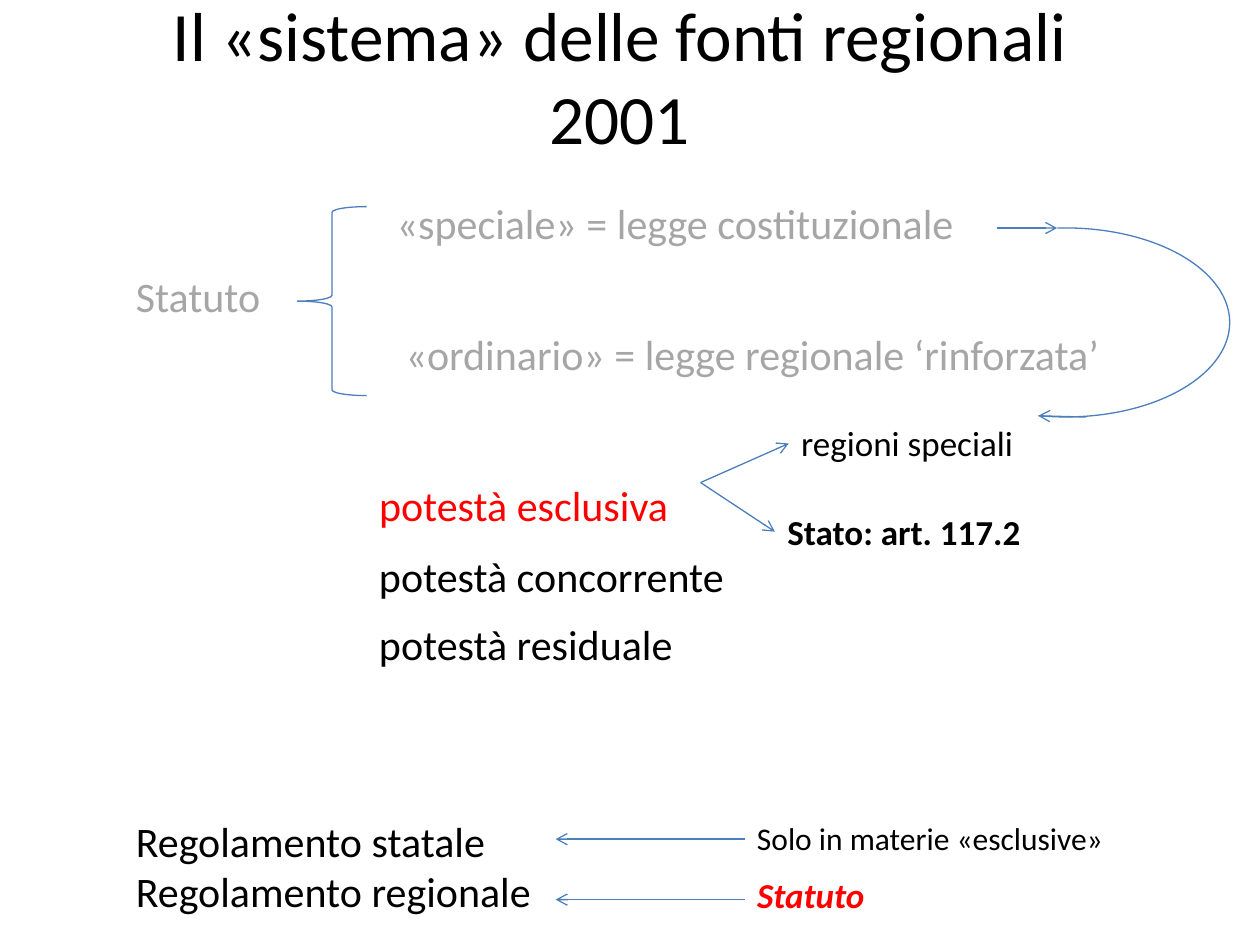
from pptx import Presentation
from pptx.dml.color import RGBColor
from pptx.enum.shapes import MSO_CONNECTOR, MSO_SHAPE
from pptx.enum.text import MSO_ANCHOR, MSO_AUTO_SIZE, PP_ALIGN
from pptx.oxml.ns import qn
from pptx.util import Inches, Pt
from lxml.etree import SubElement

COLORS = {"black": "000000", "grey": "A6A6A6", "red": "FF0000", "line": "4B7EBC"}


class SlideBuilder:
    font = "Calibri"
    line_width = 0.75

    def __init__(self, slide):
        self.slide = slide

    def add_run(self, p, text, size, color="black", bold=False, italic=False):
        r = p.add_run()
        r.text = text
        r.font.name = self.font
        r.font.size = Pt(size)
        r.font.bold = bold
        r.font.italic = italic
        r.font.color.rgb = RGBColor.from_string(COLORS[color])

    def style_line(self, sp):
        sp.line.color.rgb = RGBColor.from_string(COLORS["line"])
        sp.line.width = Pt(self.line_width)

    def title(self, text, x, y, w, h, size):
        sp = self.slide.shapes.title
        sp.left, sp.top, sp.width, sp.height = map(Inches, (x, y, w, h))
        tf = sp.text_frame
        tf.word_wrap = True
        tf.auto_size = MSO_AUTO_SIZE.NONE
        tf.vertical_anchor = MSO_ANCHOR.MIDDLE
        p = tf.paragraphs[0]
        p.alignment = PP_ALIGN.CENTER
        self.add_run(p, text, size)

    def text(self, lines, x, y, w, h, size=24, **style):
        sp = self.slide.shapes.add_textbox(*map(Inches, (x, y, w, h)))
        tf = sp.text_frame
        tf.word_wrap = True
        tf.auto_size = MSO_AUTO_SIZE.SHAPE_TO_FIT_TEXT
        for i, line in enumerate(lines):
            p = tf.add_paragraph() if i else tf.paragraphs[0]
            self.add_run(p, line, size, **style)

    def outline(self, kind, x, y, w, h, adjustments=()):
        sp = self.slide.shapes.add_shape(kind, *map(Inches, (x, y, w, h)))
        sp.shadow.inherit = False
        sp.fill.background()
        self.style_line(sp)
        for i, value in enumerate(adjustments):
            sp.adjustments[i] = value

    def arrow(self, x1, y1, x2, y2):
        sp = self.slide.shapes.add_connector(
            MSO_CONNECTOR.STRAIGHT, *map(Inches, (x1, y1, x2, y2)))
        self.style_line(sp)
        SubElement(sp.line._get_or_add_ln(), qn("a:tailEnd"), type="arrow")
        SubElement(sp._element.spPr, qn("a:effectLst"))


def main():
    prs = Presentation()
    prs.slide_width, prs.slide_height = Inches(10), Inches(7.5)
    s = SlideBuilder(prs.slides.add_slide(prs.slide_layouts[5]))

    s.title("Il «sistema» delle fonti regionali 2001", 0.67, 0.13, 8.5, 0.94, 39.6)

    s.text(["Statuto"], 0.98, 2.1, 1.34, 0.5, color="grey")
    s.outline(MSO_SHAPE.LEFT_BRACE, 2.36, 1.64, 0.55, 1.5)
    s.text(["«speciale» = legge costituzionale"], 3.05, 1.52, 5.35, 0.5, color="grey")
    s.text(["«ordinario» = legge regionale ‘rinforzata’"],
           3.12, 2.56, 6.05, 0.5, color="grey")

    s.outline(MSO_SHAPE.ARC, 7.16, 1.81, 2.6, 1.5, (158.888, 63.813))
    s.arrow(7.91, 1.81, 8.39, 1.81)
    s.arrow(8.62, 3.31, 8.24, 3.3)

    s.text(["potestà esclusiva"], 2.91, 3.76, 2.68, 0.5, color="red")
    s.text(["potestà concorrente"], 2.91, 4.32, 6.26, 0.5)
    s.text(["potestà residuale"], 2.91, 4.86, 3.76, 0.5)

    s.arrow(5.56, 3.83, 6.26, 3.52)
    s.arrow(5.56, 3.83, 6.15, 4.22)
    s.text(["regioni speciali"], 6.26, 3.3, 1.89, 0.44, size=20)
    s.text(["Stato: art. 117.2"], 6.15, 4, 2.12, 0.44, size=20, bold=True)

    s.text(["Regolamento statale", "Regolamento regionale"], 0.98, 6.42, 3.78, 0.91)
    for y in (6.66, 7.14):
        s.arrow(5.91, y, 4.41, y)
    s.text(["Solo in materie «esclusive»"], 5.91, 6.45, 3.26, 0.4, size=18)
    s.text(["Statuto"], 5.91, 6.88, 2.68, 0.44, size=20, color="red",
           bold=True, italic=True)

    prs.save("out.pptx")


if __name__ == "__main__":
    main()
